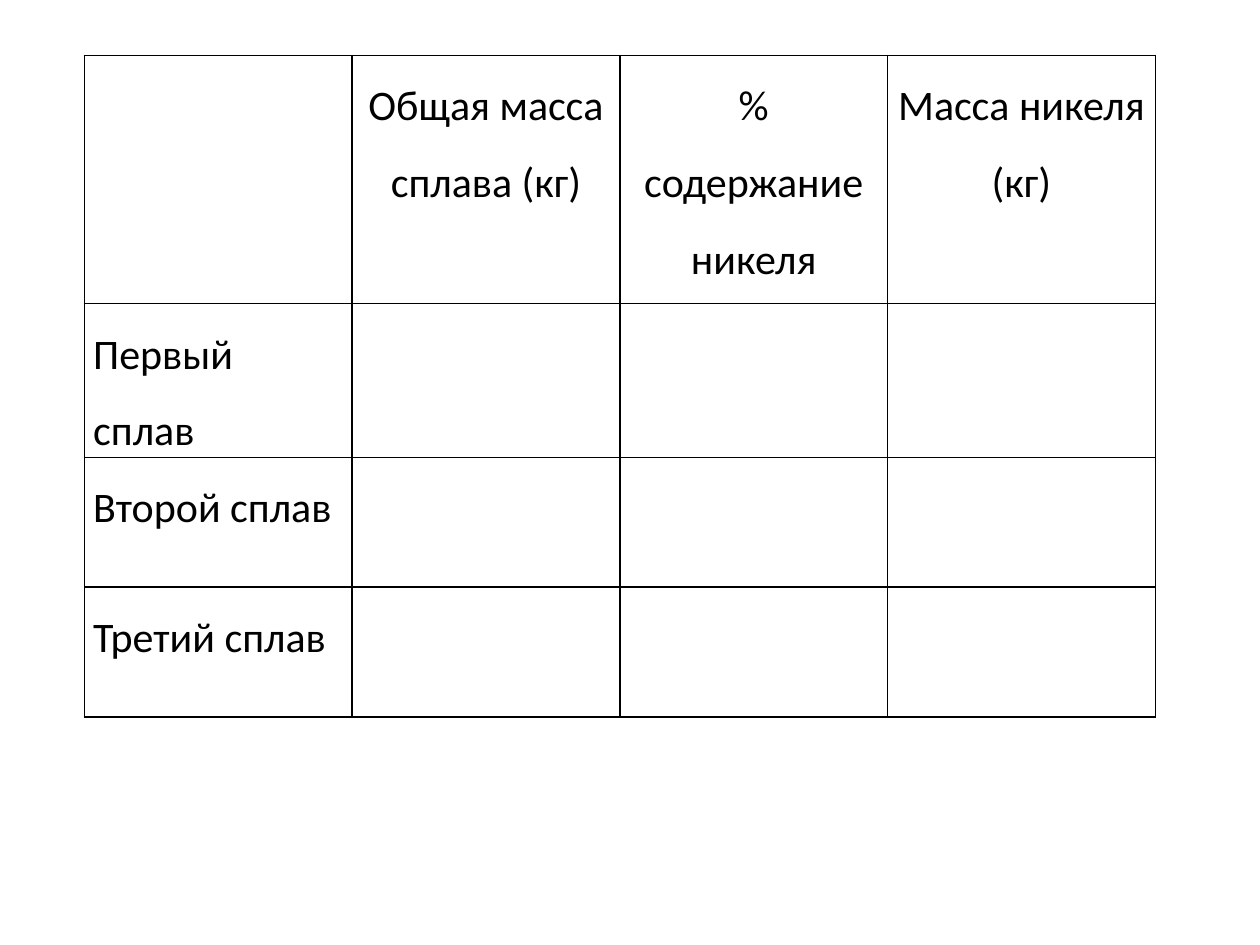
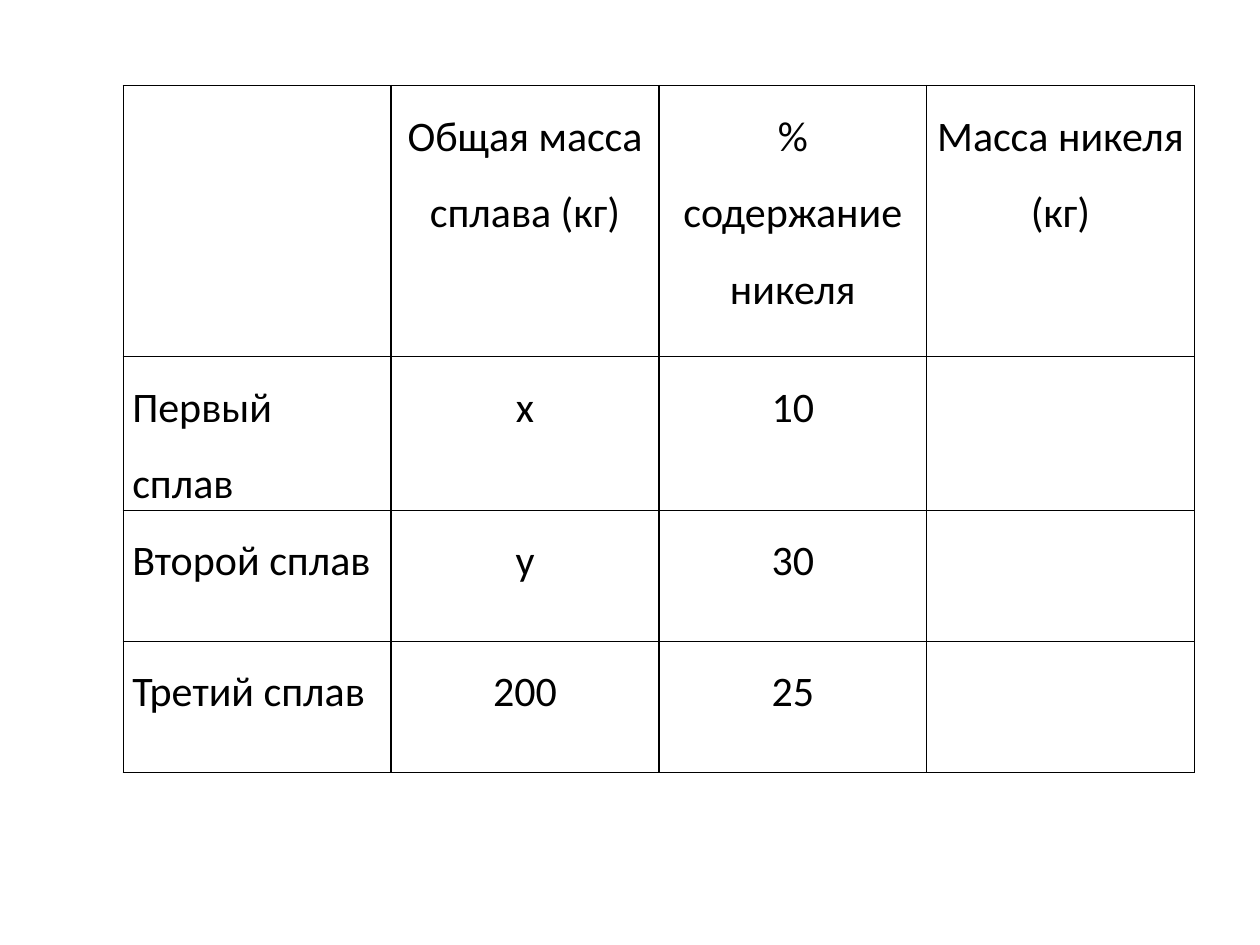
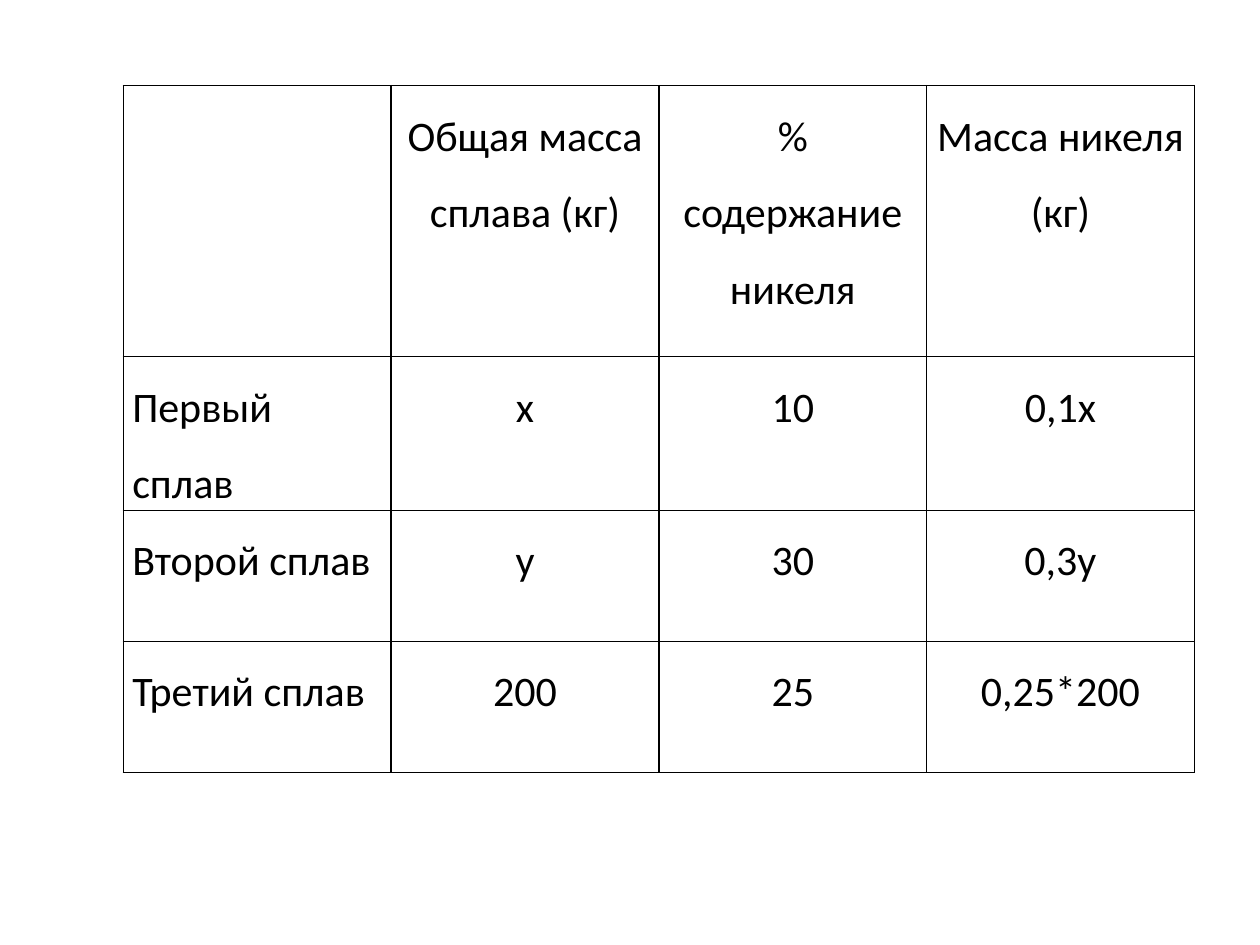
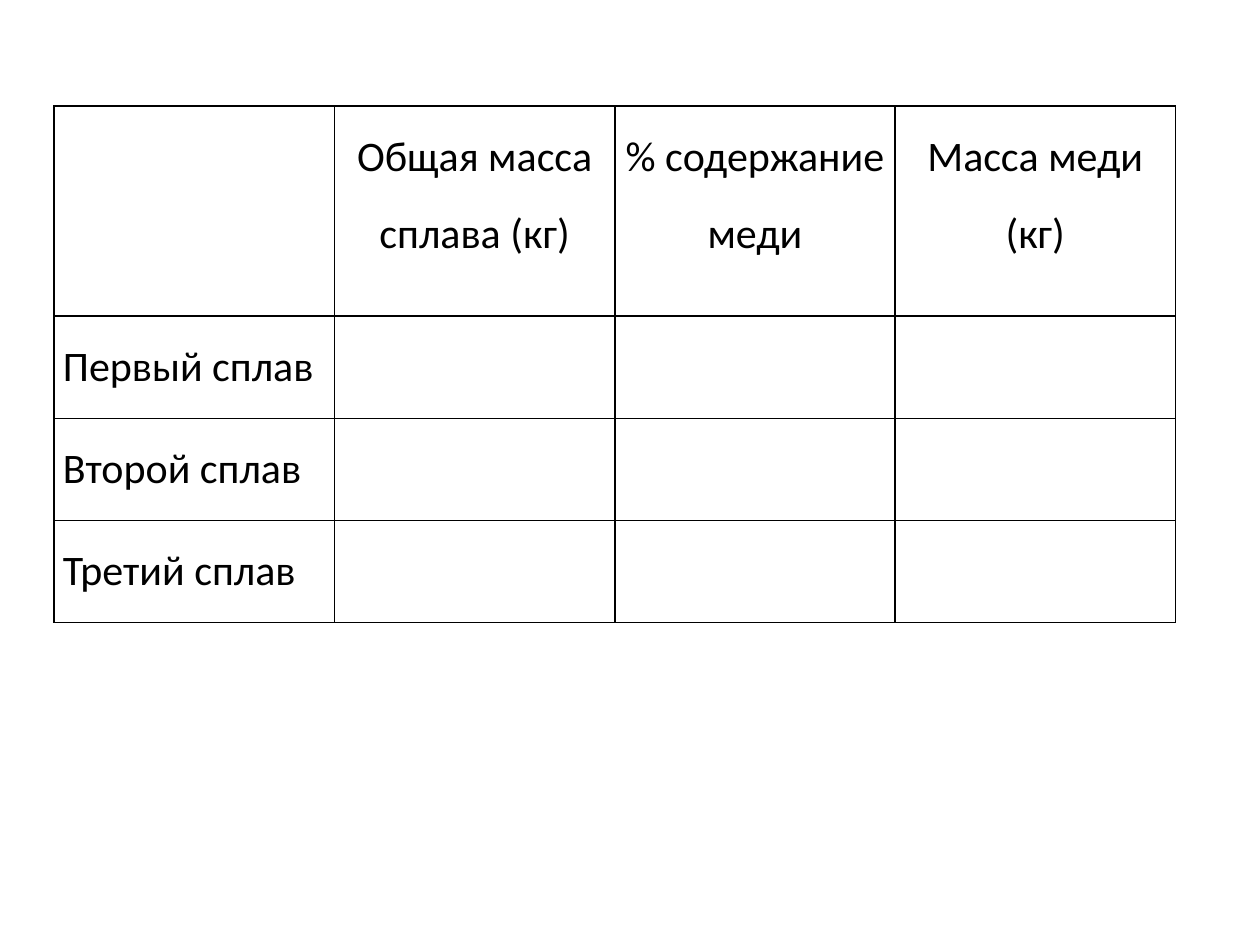
from lxml.etree import SubElement
from pptx import Presentation
from pptx.dml.color import RGBColor
from pptx.enum.text import PP_ALIGN
from pptx.oxml.ns import qn
from pptx.util import Inches, Pt

# Slide grid: 100 columns by 75 rows
WIDTH, HEIGHT = Inches(10), Inches(7.5)
COLUMN, ROW = WIDTH / 100, HEIGHT / 75


def color(value):
    return RGBColor.from_string(value)


class Deck:
    font_name = "Calibri"
    font_size = Pt(24)
    line_spacing = 1.5
    ink = "000000"
    border_width = Pt(1)
    side_margin = Inches(0.07)

    def __init__(self):
        self.presentation = Presentation()
        self.presentation.slide_width = WIDTH
        self.presentation.slide_height = HEIGHT
        self.slide = None

    def add_slide(self):
        layout = self.presentation.slide_layouts[6]
        self.slide = self.presentation.slides.add_slide(layout)

    def add_table(self, left, top, width, row_heights, content):
        shape = self.slide.shapes.add_table(
            len(content), len(content[0]), round(left * COLUMN), round(top * ROW),
            round(width * COLUMN), round(sum(row_heights) * ROW))
        table = shape.table
        table.first_row = table.horz_banding = False
        for row, height in zip(table.rows, row_heights):
            row.height = round(height * ROW)
        for row_index, texts in enumerate(content):
            for column_index, text in enumerate(texts):
                alignment = PP_ALIGN.CENTER if column_index else PP_ALIGN.JUSTIFY
                self.fill_cell(table.cell(row_index, column_index), text, alignment)

    def fill_cell(self, cell, text, alignment):
        cell.margin_left = cell.margin_right = self.side_margin
        cell.margin_top = cell.margin_bottom = 0
        self.add_borders(cell)
        cell.fill.background()
        if not text:
            return
        cell.text_frame.text = text
        for paragraph in cell.text_frame.paragraphs:
            paragraph.alignment = alignment
            paragraph.line_spacing = self.line_spacing
            for run in paragraph.runs:
                run.font.name = self.font_name
                run.font.size = self.font_size
                run.font.color.rgb = color(self.ink)

    def add_borders(self, cell):
        properties = cell._tc.get_or_add_tcPr()
        for side in ("L", "R", "T", "B"):
            line = SubElement(properties, qn(f"a:ln{side}"), w=str(self.border_width))
            fill = SubElement(line, qn("a:solidFill"))
            SubElement(fill, qn("a:srgbClr"), val=str(color(self.ink)))


def alloy_rows(mass_header, percent_header, metal_header, values):
    """Header row followed by one row for each alloy."""
    names = ("Первый сплав", "Второй сплав", "Третий сплав")
    header = ("", mass_header, percent_header, metal_header)
    return [header] + [(name, *row) for name, row in zip(names, values)]


def main():
    deck = Deck()
    total_mass = "Общая масса сплава (кг)"
    nickel = (total_mass, "% содержание никеля", "Масса никеля\n(кг)")
    copper = (total_mass, "% содержание меди", "Масса меди\n(кг)")
    blank = [("", "", "")] * 3
    known = [("х", "10"), ("у", "30"), ("200", "25")]
    nickel_masses = ("0,1х", "0,3у", "0,25*200")
    unsolved = [(*row, "") for row in known]
    solved = [(*row, mass) for row, mass in zip(known, nickel_masses)]

    # Left, top, width, header height and alloy row height in grid units
    blank_place = (6.7, 4.4, 85, 19.7, 10.3)
    filled_place = (9.8, 6.8, 85, 21.5, 10.4)
    copper_place = (4.3, 8.4, 89, 16.7, 8.1)

    slides = [
        (blank_place, nickel, blank),
        (filled_place, nickel, unsolved),
        (filled_place, nickel, solved),
        (copper_place, copper, blank),
    ]
    for (left, top, width, header_height, alloy_height), headers, values in slides:
        deck.add_slide()
        deck.add_table(left, top, width, [header_height] + [alloy_height] * 3,
                       alloy_rows(*headers, values))

    deck.presentation.save("out.pptx")


if __name__ == "__main__":
    main()
